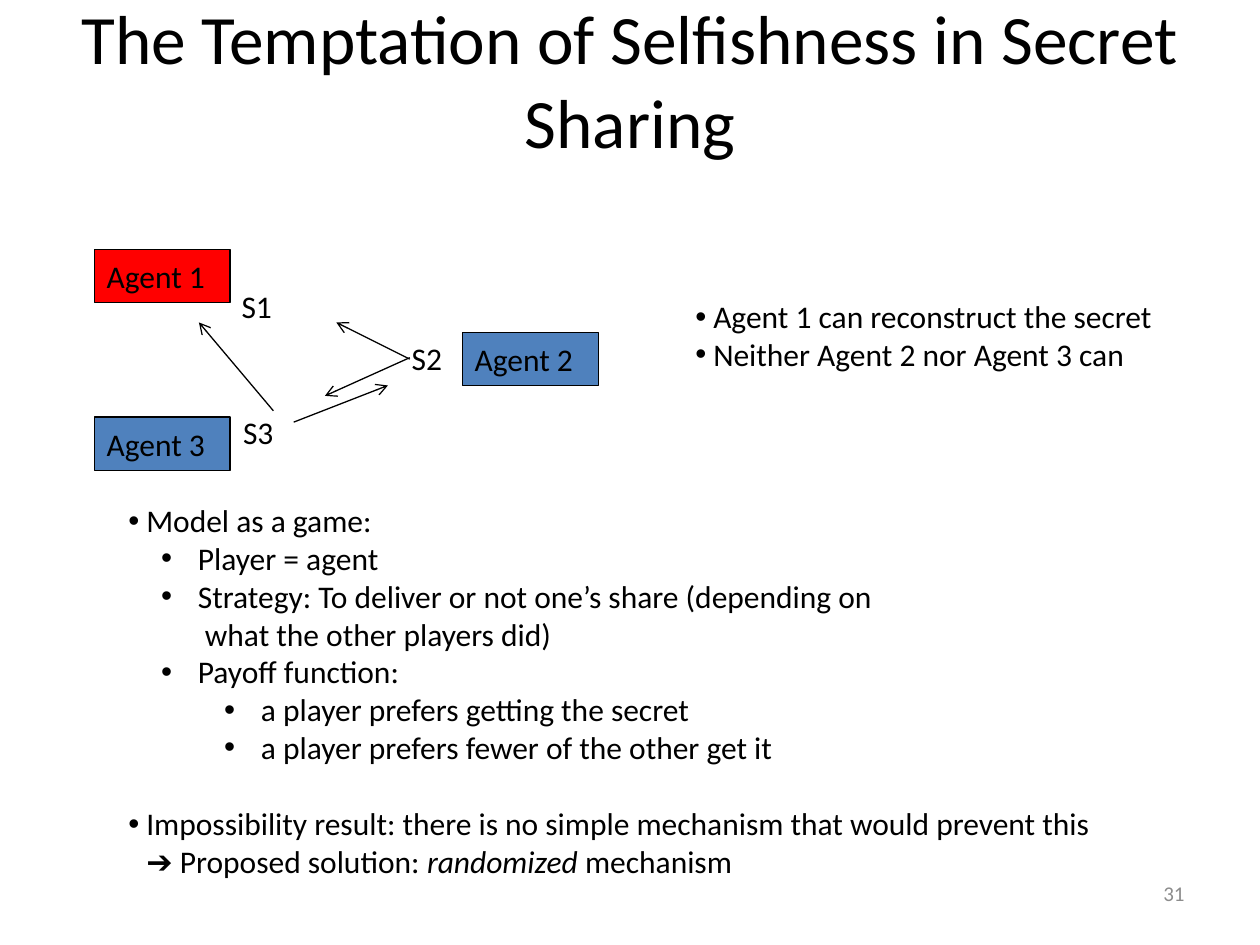
"""Build the slide on selfishness in secret sharing."""
import lxml.etree
import pptx
import pptx.dml.color
import pptx.enum.shapes
import pptx.enum.text
import pptx.oxml.ns
import pptx.util

Cm, Pt = pptx.util.Cm, pptx.util.Pt
qn = pptx.oxml.ns.qn
RGB = pptx.dml.color.RGBColor.from_string
ALIGN = pptx.enum.text.PP_ALIGN
MIDDLE = pptx.enum.text.MSO_ANCHOR.MIDDLE
COLORS = {"text": "000000", "muted": "8C8C8C", "selfish": "FF0000", "agent": "4F81BD"}
INDENTS = [(0.36, 0.36), (1.4, 0.74), (2.67, 0.74)]


def write(p, text, size=18, color="text", italic=False, align=ALIGN.LEFT, level=None):
    """Add text to a paragraph, bulleted if a level is given."""
    p.alignment = align
    for i, line in enumerate(text.split("\n")):
        if i:
            p.add_line_break()
        r = p.add_run()
        r.text = line
        r.font.name = "Calibri"
        r.font.size = Pt(size)
        r.font.italic = italic
        r.font.color.rgb = RGB(COLORS[color])
    if level is not None:
        left, hang = INDENTS[level]
        p.level = level
        pPr = p._p.get_or_add_pPr()
        pPr.set("marL", str(Cm(left)))
        pPr.set("indent", str(-Cm(hang)))
        lxml.etree.SubElement(pPr, qn("a:buFont")).set("typeface", "Arial")
        lxml.etree.SubElement(pPr, qn("a:buChar")).set("char", "•")


def text_box(x, y, w, h):
    """Add a wrapping text box and return its text frame."""
    tf = s.shapes.add_textbox(Cm(x), Cm(y), Cm(w), Cm(h)).text_frame
    tf.word_wrap = True
    return tf


prs = pptx.Presentation()
prs.slide_width, prs.slide_height = Cm(25.4), Cm(19.05)
s = prs.slides.add_slide(prs.slide_layouts[6])

tf = text_box(1.27, 0, 22.86, 3.18)
tf.vertical_anchor = MIDDLE
write(tf.paragraphs[0], "The Temptation of Selfishness in Secret Sharing",
      size=39.6, align=ALIGN.CENTER)

tf = text_box(18.21, 17.35, 5.92, 1.32)
tf.vertical_anchor = MIDDLE
write(tf.paragraphs[0], "31", size=12, color="muted", align=ALIGN.RIGHT)

agents = [("Agent 1", 1.9, 5.03, "selfish"),
          ("Agent 2", 9.32, 6.71, "agent"),
          ("Agent 3", 1.9, 8.41, "agent")]
for name, x, y, fill in agents:
    sp = s.shapes.add_shape(pptx.enum.shapes.MSO_SHAPE.RECTANGLE,
                            Cm(x), Cm(y), Cm(2.74), Cm(1.07))
    sp.shadow.inherit = False
    sp.fill.solid()
    sp.fill.fore_color.rgb = RGB(COLORS[fill])
    sp.line.color.rgb = RGB(COLORS["text"])
    sp.line.width = Pt(0.75)
    write(sp.text_frame.paragraphs[0], name)

for name, x, y in [("S1", 4.62, 5.66), ("S2", 8.05, 6.71), ("S3", 4.65, 8.2)]:
    write(text_box(x, y, 1.3, 1.02).paragraphs[0], name)

arrows = [(5.92, 8.51, 7.82, 7.77), (8.26, 7.24, 6.78, 6.5),
          (5.51, 8.28, 4.01, 6.5), (8.26, 7.21, 6.55, 7.98)]
for ends in arrows:
    cx = s.shapes.add_connector(pptx.enum.shapes.MSO_CONNECTOR.STRAIGHT, *map(Cm, ends))
    cx.line.color.rgb = RGB(COLORS["text"])
    cx.line.width = Pt(0.75)
    lxml.etree.SubElement(cx.line._get_or_add_ln(), qn("a:tailEnd")).set("type", "arrow")
    lxml.etree.SubElement(cx._element.spPr, qn("a:effectLst"))

outcome = [(0, "Agent 1 can reconstruct the secret"),
           (0, "Neither Agent 2 nor Agent 3 can")]
game = [(0, "Model as a game:"),
        (1, "Player = agent"),
        (1, "Strategy: To deliver or not one’s share (depending on\n what the other players did)"),
        (1, "Payoff function:"),
        (2, "a player prefers getting the secret"),
        (2, "a player prefers fewer of the other get it"),
        (0, "Impossibility result: there is no simple mechanism that would prevent this\n"
            "➔ Proposed solution: ")]
for box, items in [((13.77, 5.87, 10.64, 1.8), outcome), ((2.34, 9.98, 21.56, 9.5), game)]:
    tf = text_box(*box)
    for i, (level, text) in enumerate(items):
        p = tf.add_paragraph() if i else tf.paragraphs[0]
        write(p, text, level=level)

p.space_before = Pt(22)
write(p, "randomized", italic=True)
write(p, " mechanism")

prs.save("out.pptx")
